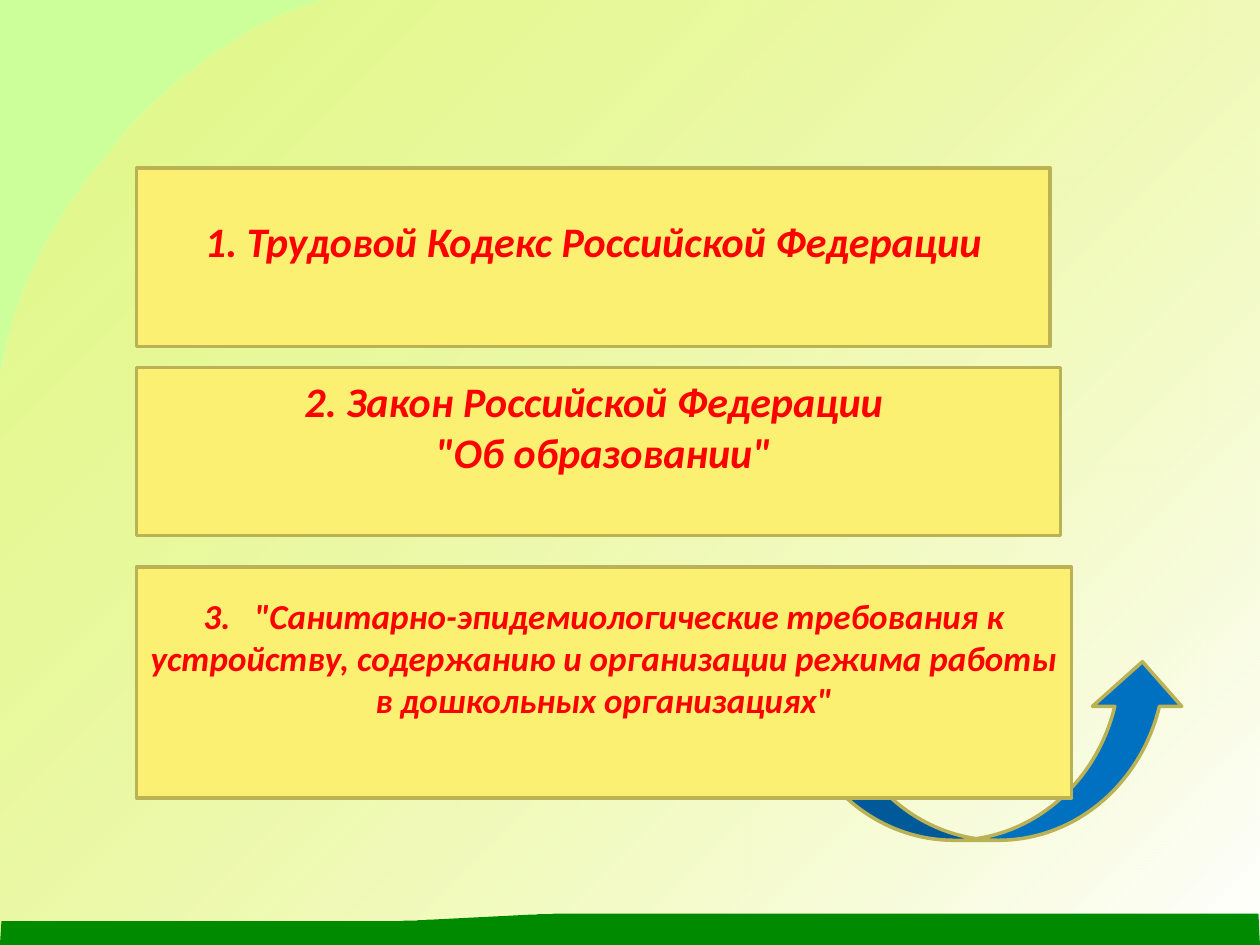
from dataclasses import dataclass

from lxml.etree import SubElement
from pptx import Presentation
from pptx.dml.color import RGBColor as Color
from pptx.enum.shapes import MSO_SHAPE as Preset
from pptx.enum.text import MSO_ANCHOR as Anchor, PP_ALIGN as Align
from pptx.oxml.ns import qn
from pptx.util import Cm, Pt


@dataclass(frozen=True)
class Theme:
    backdrop: Color = Color.from_string("CCFF99")
    panel: Color = Color.from_string("FCF073")
    white: Color = Color.from_string("FFFFFF")
    ground: Color = Color.from_string("008A00")
    arrow: Color = Color.from_string("0070C0")
    outline: Color = Color.from_string("BAB255")
    text: Color = Color.from_string("FF0000")
    font: str = "Calibri"
    large: int = 24
    small: int = 20
    outline_width: int = 2
    glow_opacity: int = 39


THEME = Theme()
WIDTH, HEIGHT = 25.4, 19.05
PANEL_LEFT = 2.75


def curve(start, first, second, end, steps=24):
    points = []
    for step in range(1, steps + 1):
        t = step / steps
        weights = ((1 - t) ** 3, 3 * t * (1 - t) ** 2, 3 * t * t * (1 - t), t ** 3)
        corners = (start, first, second, end)
        points.append(tuple(
            sum(weight * corner[axis] for weight, corner in zip(weights, corners))
            for axis in (0, 1)
        ))
    return points


def add_outline(page, points):
    start, *rest = [(x * 100, y * 100) for x, y in points]
    builder = page.shapes.build_freeform(*start, scale=Cm(0.01))
    builder.add_line_segments(rest, close=True)
    shape = builder.convert_to_shape()
    shape.shadow.inherit = False
    shape.line.fill.background()
    return shape


def add_glow(page):
    top, middle, bottom = (6.55, 0), (2.49, 2.72), (0, 7.65)
    shape = add_outline(page, [
        top,
        *curve(top, (4.83, 0.41), (2.95, 2.11), middle),
        *curve(middle, (2.03, 3.35), (0.41, 4.93), bottom),
        (0, HEIGHT), (WIDTH, HEIGHT), (WIDTH, 0),
    ])
    shape.fill.gradient()
    shape.fill.gradient_angle = 315
    stops = shape.fill.gradient_stops
    for stop, color, position in zip(stops, (THEME.panel, THEME.white), (0, 1)):
        stop.color.rgb = color
        stop.position = position
    tint = next(shape.element.iter(qn("a:srgbClr")))
    SubElement(tint, qn("a:alpha"), val=str(THEME.glow_opacity * 1000))


def add_ground(page):
    crest, slope, foot = (12.01, 18.42), (10.67, 18.44), (8.69, 18.54)
    shape = add_outline(page, [
        (25.37, 18.42), crest,
        *curve(crest, (11.38, 18.42), (11.2, 18.42), slope),
        foot,
        *curve(foot, (8.13, 18.57), (8.03, 18.57), (7.26, 18.57)),
        (0.03, 18.57), (0, HEIGHT), (WIDTH, HEIGHT),
    ])
    shape.fill.solid()
    shape.fill.fore_color.rgb = THEME.ground


def add_preset(page, preset, left, top, width, height, color):
    shape = page.shapes.add_shape(preset, Cm(left), Cm(top), Cm(width), Cm(height))
    shape.shadow.inherit = False
    shape.fill.solid()
    shape.fill.fore_color.rgb = color
    shape.line.color.rgb = THEME.outline
    shape.line.width = Pt(THEME.outline_width)
    return shape


def add_panel(page, top, width, height, text, size, inset_top, inset_bottom):
    box = add_preset(page, Preset.RECTANGLE, PANEL_LEFT, top, width, height, THEME.panel)
    frame = box.text_frame
    frame.word_wrap = True
    frame.vertical_anchor = Anchor.MIDDLE
    frame.margin_top, frame.margin_bottom = Cm(inset_top), Cm(inset_bottom)
    frame.text = text
    for para in frame.paragraphs:
        para.alignment = Align.CENTER
        for span in para.runs:
            font = span.font
            font.name, font.size = THEME.font, Pt(size)
            font.bold = font.italic = True
            font.color.rgb = THEME.text


def main():
    deck = Presentation()
    deck.slide_width, deck.slide_height = Cm(WIDTH), Cm(HEIGHT)
    page = deck.slides.add_slide(deck.slide_layouts[6])
    page.background.fill.solid()
    page.background.fill.fore_color.rgb = THEME.backdrop

    add_glow(page)
    add_ground(page)
    add_preset(page, Preset.CURVED_UP_ARROW, 15.88, 13.34, 8.05, 3.6, THEME.arrow)
    panels = [
        (11.43, 18.85, 4.66,
         '3.   "Санитарно-эпидемиологические требования к устройству, '
         'содержанию и организации режима работы в дошкольных организациях"',
         THEME.small, 0.13, 1.16),
        (7.41, 18.63, 3.39,
         '2. Закон Российской Федерации \n "Об образовании"',
         THEME.large, 0.13, 1.16),
        (3.39, 18.42, 3.6,
         "1. Трудовой Кодекс Российской Федерации",
         THEME.large, 1.33, 2.02),
    ]
    for panel in panels:
        add_panel(page, *panel)
    deck.save("out.pptx")


if __name__ == "__main__":
    main()
